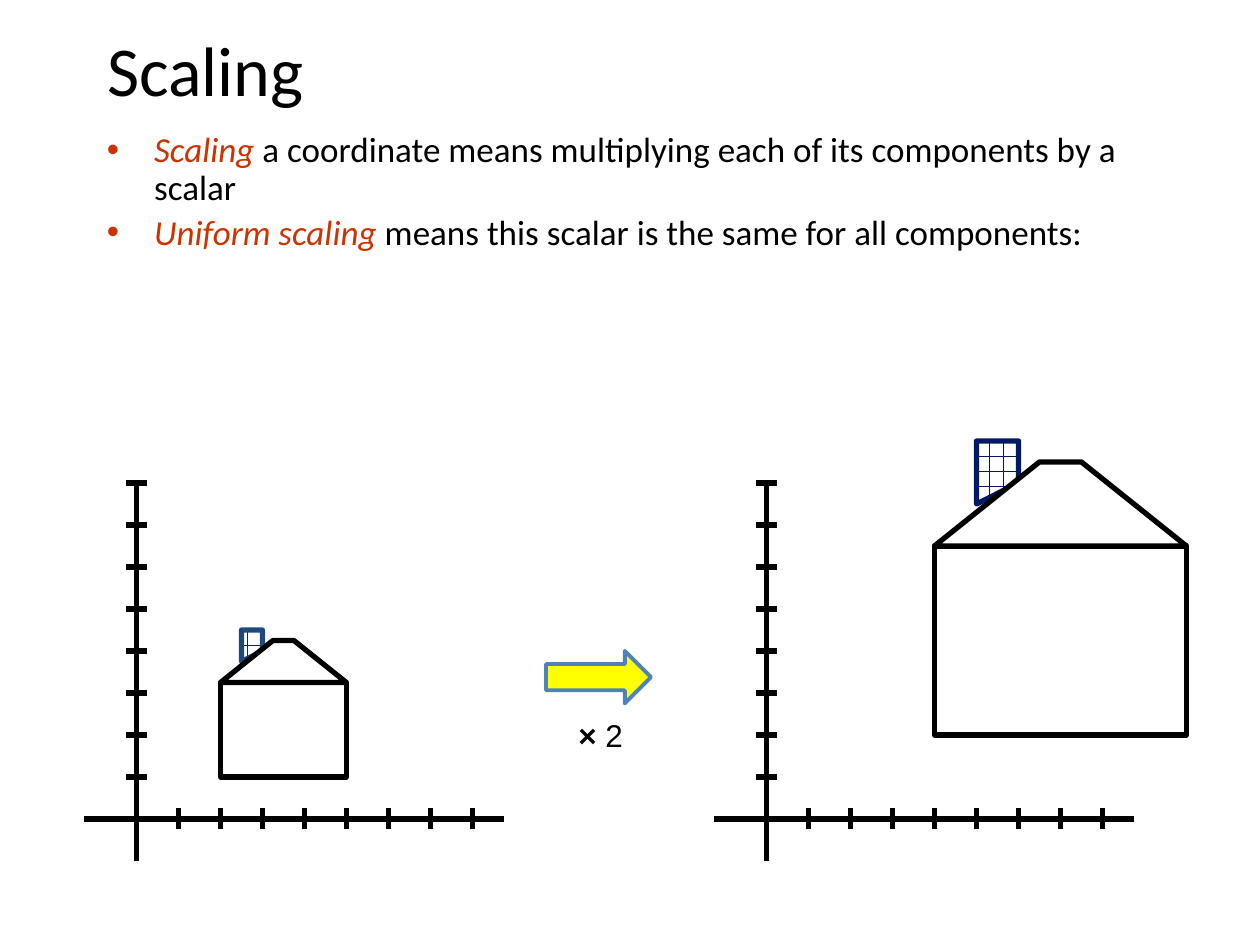
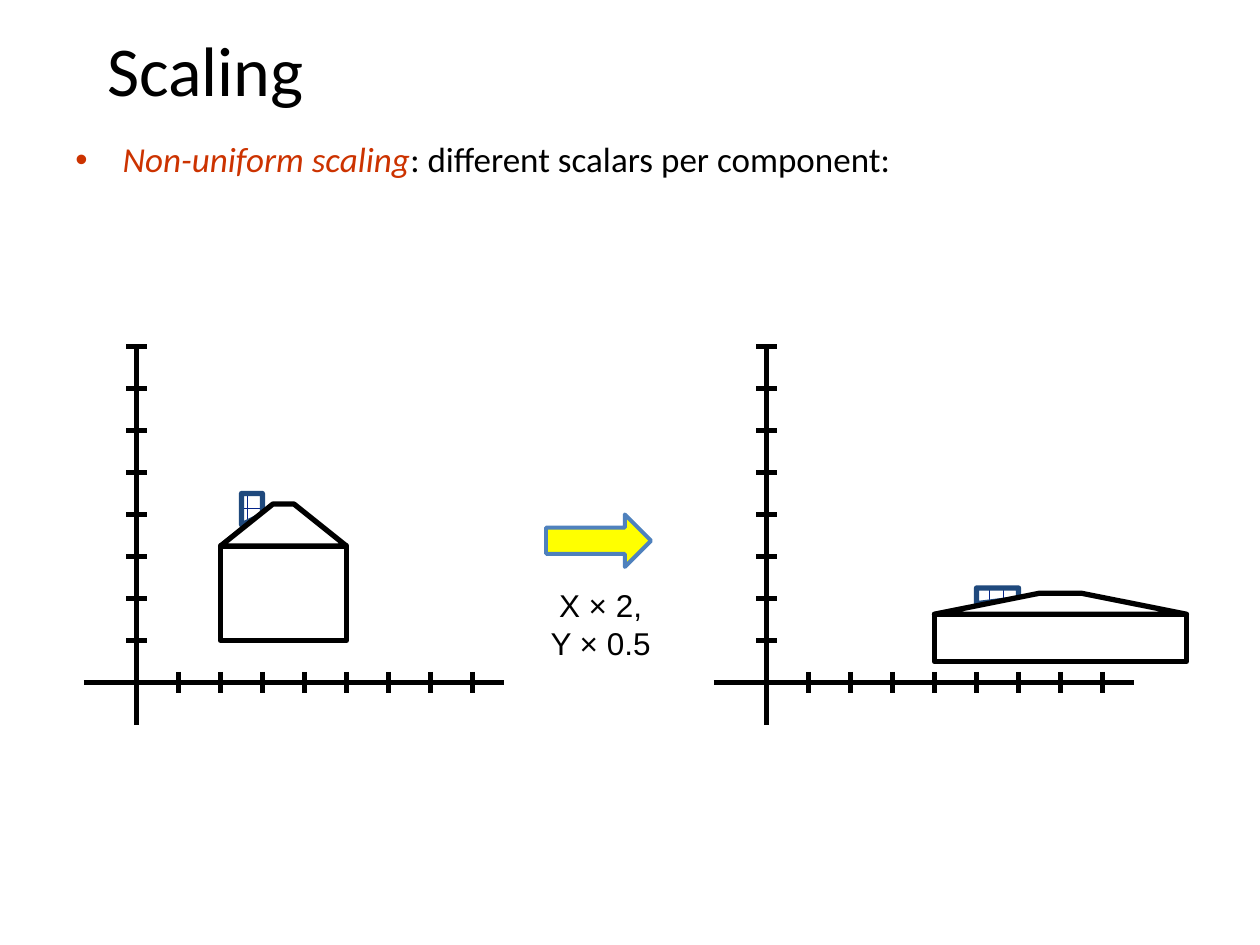
from dataclasses import dataclass

from lxml.etree import SubElement
from pptx import Presentation
from pptx.dml.color import RGBColor
from pptx.enum.dml import MSO_PATTERN
from pptx.enum.shapes import MSO_CONNECTOR, MSO_SHAPE
from pptx.enum.text import MSO_ANCHOR, PP_ALIGN
from pptx.oxml.ns import qn
from pptx.util import Inches, Pt


@dataclass(frozen=True)
class Theme:
    ink: str = "000000"
    paper: str = "FFFFFF"
    accent: str = "CC3300"
    arrow_fill: str = "FFFF00"
    arrow_line: str = "4F81BD"
    text_font: str = "Calibri"
    label_font: str = "Arial"
    title_size: int = 40
    body_size: int = 20
    label_size: int = 18
    line_width: float = 3
    arrow_width: float = 2.25


THEME = Theme()
BLUE_BRICK = {"brick": "032389", "outline": "1F497D"}
NAVY_BRICK = {"brick": "011965", "outline": "011965"}

# Content: bullets are (emphasised words, rest); label lines are (bold, regular).
# Boxes are in inches; origin_row counts grid units from the slide's top.
SLIDES = [
    {
        "title": "Scaling",
        "bullets": [
            ("Scaling", " a coordinate means multiplying each of its components by a scalar"),
            ("Uniform scaling", " means this scalar is the same for all components:"),
        ],
        "body_box": (0.75, 1, 8.5, 2.62),
        "origin_row": 19.5,
        "scale": (2, 2),
        "scaled_chimney": NAVY_BRICK,
        "label": [("× ", "2")],
        "label_size": (1.9, 1.5),
    },
    {
        "title": "Scaling",
        "bullets": [("Non-uniform scaling", ": different scalars per component:")],
        "body_box": (0.5, 1.08, 9, 5.62),
        "origin_row": 16.25,
        "scale": (2, 0.5),
        "scaled_chimney": BLUE_BRICK,
        "label": [("", "X × 2,"), ("", "Y × 0.5")],
        "label_size": (3.2, 2.7),
    },
]

# House outline in axis coordinates, y pointing up
CHIMNEY = [(2.5, 3.75), (2.5, 4.5), (3, 4.5), (3, 4)]
WALL_LEFT, WALL_BOTTOM, WALL_RIGHT, WALL_TOP = 2, 1, 5, 3.25
ROOF = [(2, 3.25), (3.25, 4.25), (3.75, 4.25), (5, 3.25)]

# Grid: one unit is one axis tick
SLIDE_WIDTH, SLIDE_HEIGHT = Inches(10), Inches(7.5)
UNIT = SLIDE_WIDTH / 30
ORIGIN_COLUMNS = (3.25, 18.25)
TICKS = range(1, 9)
TICK_REACH = 0.25
TITLE_BOX = (0.75, 0.08, 8.5, 0.92)
ARROW_COLUMN, ARROW_RISE, ARROW_SIZE = 13, 4, (2.5, 1.25)
LABEL_CENTER, LABEL_RISE = 14.3, 2.75


def color(value):
    return RGBColor.from_string(value)


def units(*lengths):
    return [round(length * UNIT) for length in lengths]


def set_outline(shape, line_color=THEME.ink, width=THEME.line_width):
    shape.line.color.rgb = color(line_color)
    shape.line.width = Pt(width)


def paint(shape, fill_color=THEME.paper, line_color=THEME.ink, width=THEME.line_width):
    shape.shadow.inherit = False
    shape.fill.solid()
    shape.fill.fore_color.rgb = color(fill_color)
    set_outline(shape, line_color, width)


def style_font(font, name, size, font_color=THEME.ink):
    font.name = name
    font.size = Pt(size)
    font.color.rgb = color(font_color)


class Plot:
    """Axes and a house, drawn in axis coordinates around an origin."""

    def __init__(self, slide, column, row):
        self.shapes = slide.shapes.add_group_shape().shapes
        self.column, self.row = column, row

    def point(self, x, y):
        return units(self.column + x, self.row - y)

    def line(self, start, end):
        connector = self.shapes.add_connector(
            MSO_CONNECTOR.STRAIGHT, *self.point(*start), *self.point(*end))
        set_outline(connector)
        SubElement(connector._element.spPr, qn("a:effectLst"))

    def polygon(self, corners):
        first, *others = [self.point(*corner) for corner in corners]
        builder = self.shapes.build_freeform(*first)
        builder.add_line_segments(others, close=True)
        shape = builder.convert_to_shape()
        paint(shape)
        return shape

    def draw_axes(self):
        self.line((0, 8), (0, -1))
        self.line((-1.25, 0), (8.75, 0))
        for tick in TICKS:
            self.line((tick, TICK_REACH), (tick, -TICK_REACH))
            self.line((-TICK_REACH, tick), (TICK_REACH, tick))

    def draw_house(self, scale, chimney_colors):
        across, up = scale

        def scaled(corners):
            return [(x * across, y * up) for x, y in corners]

        chimney = self.polygon(scaled(CHIMNEY))
        chimney.fill.patterned()
        chimney.fill.pattern = MSO_PATTERN.HORIZONTAL_BRICK
        chimney.fill.fore_color.rgb = color(chimney_colors["brick"])
        chimney.fill.back_color.rgb = color(THEME.paper)
        set_outline(chimney, chimney_colors["outline"])

        wall = self.shapes.add_shape(
            MSO_SHAPE.RECTANGLE,
            *self.point(WALL_LEFT * across, WALL_TOP * up),
            *units((WALL_RIGHT - WALL_LEFT) * across, (WALL_TOP - WALL_BOTTOM) * up))
        paint(wall)
        self.polygon(scaled(ROOF))


def add_title(slide, text):
    title = slide.shapes.title
    title.left, title.top, title.width, title.height = map(Inches, TITLE_BOX)
    title.text_frame.text = text
    title.text_frame.vertical_anchor = MSO_ANCHOR.MIDDLE
    paragraph = title.text_frame.paragraphs[0]
    paragraph.alignment = PP_ALIGN.LEFT
    style_font(paragraph.font, THEME.text_font, THEME.title_size)


def add_paragraphs(frame, count):
    return [frame.paragraphs[0]] + [frame.add_paragraph() for _ in range(count - 1)]


def add_bullets(slide, bullets, box):
    frame = slide.shapes.add_textbox(*map(Inches, box)).text_frame
    frame.word_wrap = True
    for paragraph, (term, rest) in zip(add_paragraphs(frame, len(bullets)), bullets):
        paragraph.line_spacing = 0.9
        paragraph.space_before = Pt(THEME.body_size * 0.2)
        style_font(paragraph.font, THEME.text_font, THEME.body_size)
        properties = paragraph._p.get_or_add_pPr()
        indent = Inches(0.375)
        properties.set("marL", str(indent))
        properties.set("indent", str(-indent))
        # Bullet elements must come before the default run properties
        bullet_color = SubElement(properties, qn("a:buClr"))
        SubElement(bullet_color, qn("a:srgbClr"), val=THEME.accent)
        SubElement(properties, qn("a:buFont"), typeface=THEME.label_font)
        SubElement(properties, qn("a:buChar"), char="•")
        defaults = properties.find(qn("a:defRPr"))
        properties.append(defaults)

        for text, emphasised in ((term, True), (rest, False)):
            run = paragraph.add_run()
            run.text = text
            run.font.italic = emphasised
            style_font(run.font, THEME.text_font, THEME.body_size,
                       THEME.accent if emphasised else THEME.ink)


def add_scale_arrow(slide, row, label, label_size):
    arrow = slide.shapes.add_shape(
        MSO_SHAPE.RIGHT_ARROW, *units(ARROW_COLUMN, row - ARROW_RISE, *ARROW_SIZE))
    paint(arrow, THEME.arrow_fill, THEME.arrow_line, THEME.arrow_width)

    width, height = label_size
    frame = slide.shapes.add_textbox(
        *units(LABEL_CENTER - width / 2, row - LABEL_RISE, width, height)).text_frame
    frame.word_wrap = False
    frame.vertical_anchor = MSO_ANCHOR.MIDDLE
    for paragraph, line in zip(add_paragraphs(frame, len(label)), label):
        paragraph.alignment = PP_ALIGN.CENTER
        for text, bold in zip(line, (True, False)):
            if text:
                run = paragraph.add_run()
                run.text = text
                run.font.bold = bold
                style_font(run.font, THEME.label_font, THEME.label_size)


def build_slide(presentation, content):
    slide = presentation.slides.add_slide(presentation.slide_layouts[5])
    add_title(slide, content["title"])
    add_bullets(slide, content["bullets"], content["body_box"])

    # House before and after scaling
    row = content["origin_row"]
    houses = (((1, 1), BLUE_BRICK), (content["scale"], content["scaled_chimney"]))
    for column, (scale, chimney_colors) in zip(ORIGIN_COLUMNS, houses):
        plot = Plot(slide, column, row)
        plot.draw_axes()
        plot.draw_house(scale, chimney_colors)

    add_scale_arrow(slide, row, content["label"], content["label_size"])


def main():
    presentation = Presentation()
    presentation.slide_width, presentation.slide_height = SLIDE_WIDTH, SLIDE_HEIGHT
    for content in SLIDES:
        build_slide(presentation, content)
    presentation.save("out.pptx")


if __name__ == "__main__":
    main()
